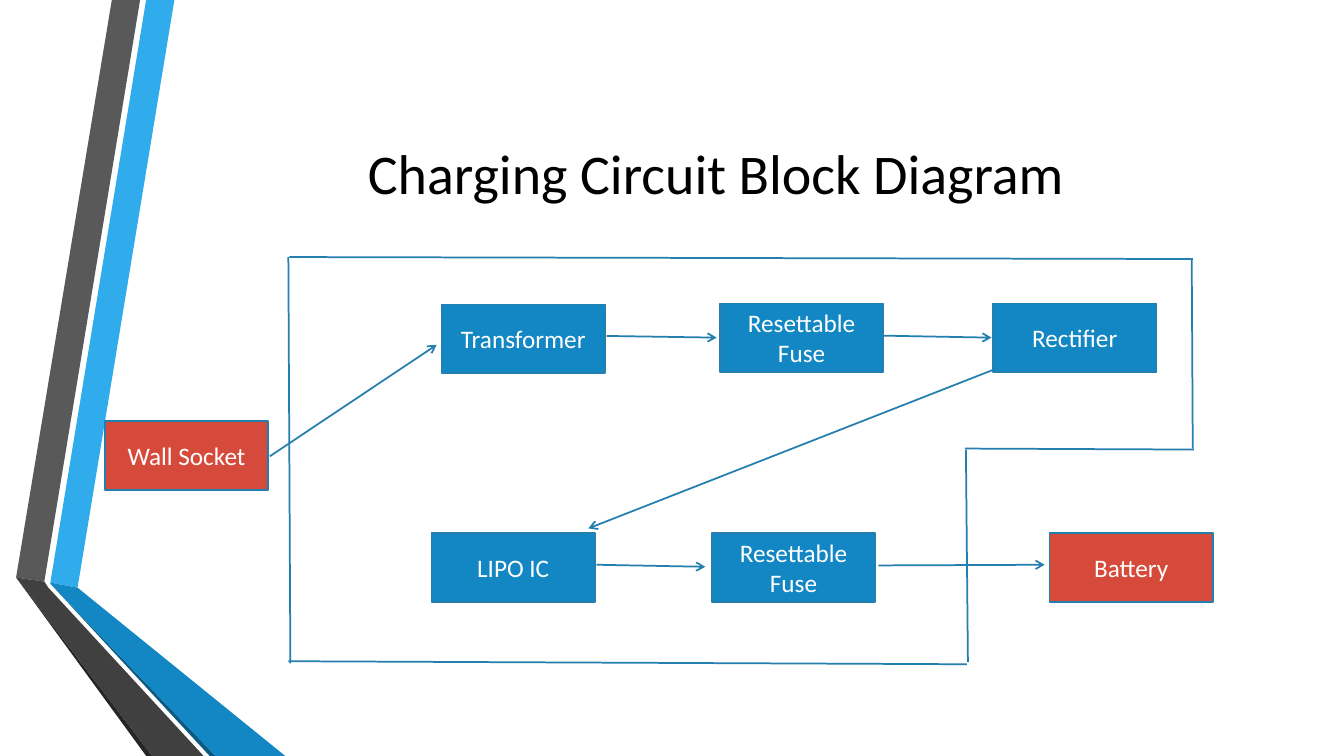
import pptx
import pptx.util
import pptx.dml.color
import pptx.enum.shapes
import pptx.enum.text
import lxml.etree
from pptx.oxml.ns import qn

# Content
TITLE = "Charging Circuit Block Diagram"
COLORS = {
    "sky": "30ACEC", "blue": "1287C3", "navy": "0C5A82", "outline": "247FAF",
    "gray": "595959", "dark": "404040", "black_gray": "262626",
    "red": "D64A3B", "white": "FFFFFF", "black": "000000",
}
FONT = "Calibri"
SLIDE_SIZE = (13.33, 7.5)
TITLE_BOX = (1.62, 0.75, 10.96, 1.92)
BLOCK_SIZE = (1.62, 0.68)
LINE_WIDTH = 1.25
TOP_ROW, BOTTOM_ROW = 3.01, 5.29

# Ribbon on the left: color, corners in inches
RIBBON = [
    ("sky", [(0.5, 5.78), (0.77, 5.83), (1.73, 0), (1.45, 0)]),
    ("gray", [(1.39, 0), (1.11, 0), (0.16, 5.73), (0.44, 5.77)]),
    ("black_gray", [(0.16, 5.73), (1.45, 7.5), (1.51, 7.5)]),
    ("navy", [(0.5, 5.79), (2.08, 7.5), (2.14, 7.5)]),
    ("blue", [(0.5, 5.79), (2.14, 7.5), (2.83, 7.5), (0.77, 5.83), (0.5, 5.78)]),
    ("dark", [(2.02, 7.5), (0.48, 5.83), (0.44, 5.77), (0.16, 5.73), (1.51, 7.5)]),
]

# Blocks: key -> label, left, top, color
BLOCKS = {
    "transformer": ("Transformer", 4.38, TOP_ROW + 0.01, "blue"),
    "input fuse": ("Resettable Fuse", 7.14, TOP_ROW, "blue"),
    "rectifier": ("Rectifier", 9.85, TOP_ROW, "blue"),
    "charger": ("LIPO IC", 4.28, BOTTOM_ROW, "blue"),
    "output fuse": ("Resettable Fuse", 7.06, BOTTOM_ROW, "blue"),
    "socket": ("Wall Socket", 1.04, 4.18, "red"),
    "battery": ("Battery", 10.41, BOTTOM_ROW, "red"),
}

# Enclosure sides: start, end in inches
ENCLOSURE = [
    ((2.86, 6.56), (9.59, 6.59)),
    ((9.58, 4.46), (9.6, 6.57)),
    ((11.84, 4.46), (9.57, 4.45)),
    ((11.82, 2.57), (11.83, 4.45)),
    ((2.87, 2.55), (11.83, 2.57)),
    ((2.86, 2.55), (2.88, 6.58)),
]

# Arrows: block and anchor (shares of block size) at each end
ARROWS = [
    ("socket", (1.01, 0.51), "transformer", (-0.03, 0.59)),
    ("transformer", (1.01, 0.46), "input fuse", (-0.02, 0.5)),
    ("input fuse", (0.99, 0.47), "rectifier", (-0.01, 0.5)),
    ("rectifier", (0, 0.97), "charger", (0.96, -0.07)),
    ("charger", (1.01, 0.46), "output fuse", (-0.04, 0.49)),
    ("output fuse", (1.02, 0.47), "battery", (-0.03, 0.46)),
]


def inches(values):
    return [pptx.util.Inches(value) for value in values]


def rgb(name):
    return pptx.dml.color.RGBColor.from_string(COLORS[name])


def paint(shape, fill, outline=None):
    shape.shadow.inherit = False
    shape.fill.solid()
    shape.fill.fore_color.rgb = rgb(fill)
    if outline:
        shape.line.color.rgb = rgb(outline)
        shape.line.width = pptx.util.Pt(LINE_WIDTH)
    else:
        shape.line.fill.background()


def write(shape, text, size, color):
    frame = shape.text_frame
    frame.word_wrap = True
    frame.vertical_anchor = pptx.enum.text.MSO_ANCHOR.MIDDLE
    para = frame.paragraphs[0]
    para.alignment = pptx.enum.text.PP_ALIGN.CENTER
    span = para.add_run()
    span.text = text
    formats = {"name": FONT, "size": pptx.util.Pt(size), "bold": False}
    for name, value in formats.items():
        setattr(span.font, name, value)
    span.font.color.rgb = rgb(color)


def add_line(page, start, end, arrow=False):
    line = page.shapes.add_connector(
        pptx.enum.shapes.MSO_CONNECTOR.STRAIGHT, *inches(start + end))
    line.line.color.rgb = rgb("outline")
    line.line.width = pptx.util.Pt(LINE_WIDTH)
    if arrow:
        lxml.etree.SubElement(line.line._get_or_add_ln(), qn("a:tailEnd"), type="arrow")
    lxml.etree.SubElement(line._element.spPr, qn("a:effectLst"))


def anchor_point(key, shares):
    corner = BLOCKS[key][1:3]
    return tuple(start + size * share
                 for start, size, share in zip(corner, BLOCK_SIZE, shares))


def main():
    deck = pptx.Presentation()
    deck.slide_width, deck.slide_height = inches(SLIDE_SIZE)
    page = deck.slides.add_slide(deck.slide_layouts[5])

    # Ribbon
    for color, corners in RIBBON:
        points = [inches(corner) for corner in corners]
        builder = page.shapes.build_freeform(*points[0])
        builder.add_line_segments(points[1:], close=True)
        paint(builder.convert_to_shape(), color)

    # Title
    title = page.shapes.title
    for name, value in zip(("left", "top", "width", "height"), inches(TITLE_BOX)):
        setattr(title, name, value)
    write(title, TITLE, 40, "black")

    # Blocks
    for label, left, top, color in BLOCKS.values():
        box = page.shapes.add_shape(
            pptx.enum.shapes.MSO_SHAPE.RECTANGLE, *inches((left, top) + BLOCK_SIZE))
        paint(box, color, "outline")
        write(box, label, 18, "white")

    # Enclosure and arrows
    for start, end in ENCLOSURE:
        add_line(page, start, end)
    for source, leaving, target, arriving in ARROWS:
        add_line(page, anchor_point(source, leaving),
                 anchor_point(target, arriving), arrow=True)

    deck.save("out.pptx")


if __name__ == "__main__":
    main()
